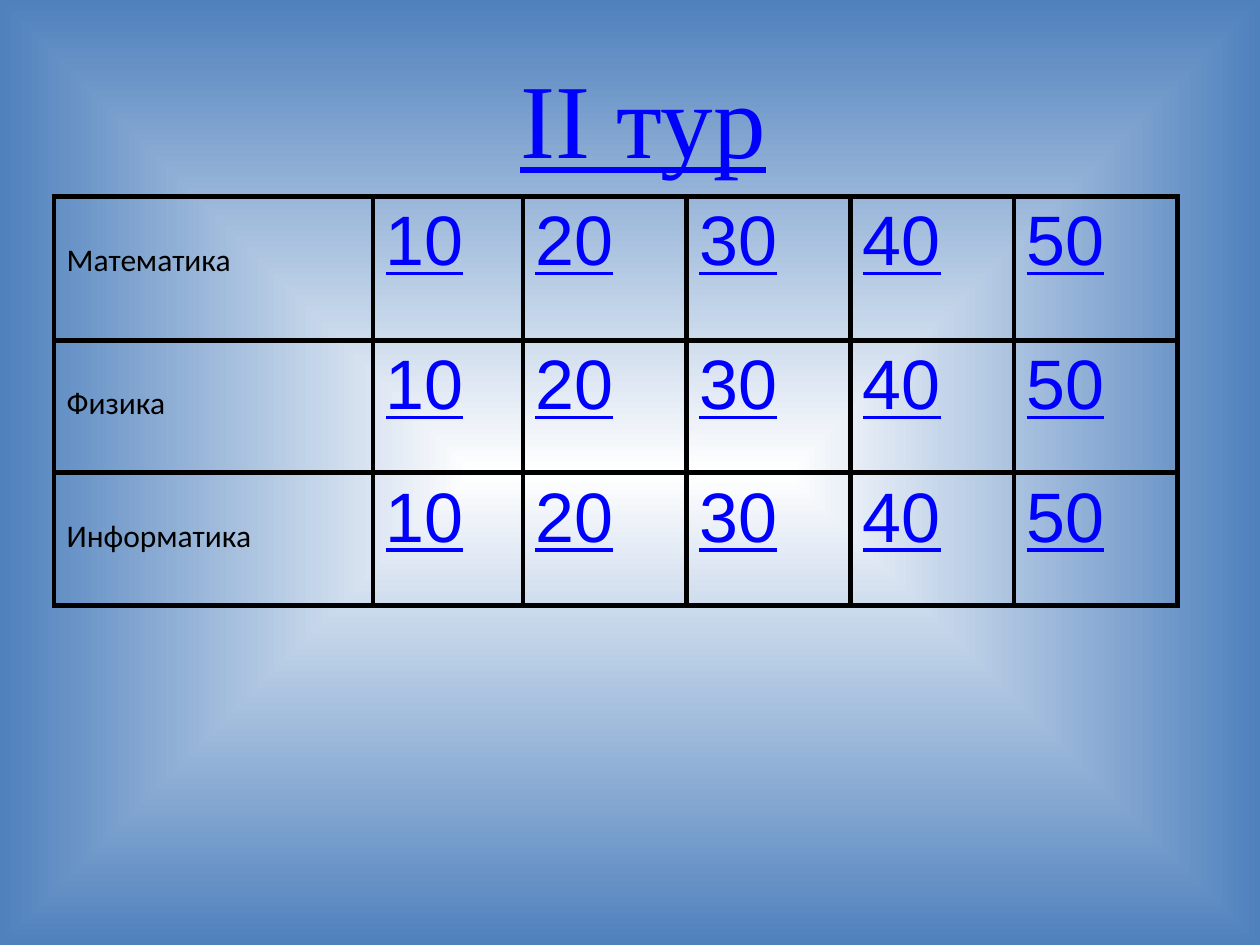
from lxml import etree
from pptx import Presentation
from pptx.dml.color import RGBColor as RGB
from pptx.enum.text import MSO_ANCHOR as ANCHOR, PP_ALIGN as ALIGN
from pptx.oxml import parse_xml
from pptx.oxml.ns import nsdecls, qn
from pptx.util import Cm, Pt

COLORS = {"center": "FFFFFF", "edge": "4F81BD", "link": "0000FF", "text": "000000", "border": "000000"}
SUBJECTS = ["Математика", "Физика", "Информатика"]
POINTS = [10, 20, 30, 40, 50]
COLUMNS = [6.43, 3.02] + [3.3] * 4
ROWS = [2.9, 2.67, 2.67]


def write(tf, text, size=40, font="Arial", color="link", underline=True, align=ALIGN.LEFT):
    p = tf.paragraphs[0]
    p.alignment = align
    r = p.add_run()
    r.text = text
    r.font.size = Pt(size)
    r.font.name = font
    r.font.underline = underline
    r.font.color.rgb = RGB.from_string(COLORS[color])


def add_borders(cell):
    tcPr = cell._tc.get_or_add_tcPr()
    for i, side in enumerate(["lnL", "lnR", "lnT", "lnB"]):
        tcPr.insert(i, parse_xml(
            f'<a:{side} {nsdecls("a")} w="{Pt(3)}"><a:solidFill>'
            f'<a:srgbClr val="{COLORS["border"]}"/></a:solidFill></a:{side}>'))


prs = Presentation()
prs.slide_width, prs.slide_height = Cm(25.4), Cm(19.05)
s = prs.slides.add_slide(prs.slide_layouts[6])

fill = s.background.fill
fill.gradient()
for stop, name in zip(fill.gradient_stops, ["center", "edge"]):
    stop.color.rgb = RGB.from_string(COLORS[name])
grad = next(s.element.iter(qn("a:gradFill")))
grad.remove(grad.find(qn("a:lin")))
path = etree.SubElement(grad, qn("a:path"), path="shape")
etree.SubElement(path, qn("a:fillToRect"), l="50000", t="50000", r="50000", b="50000")

title = s.shapes.add_textbox(Cm(1.27), Cm(0.76), Cm(22.86), Cm(3.18))
tf = title.text_frame
tf.word_wrap = True
tf.vertical_anchor = ANCHOR.MIDDLE
tf.margin_left = Cm(0.78)
write(tf, "II тур", size=60, font="Times New Roman", align=ALIGN.CENTER)

frame = s.shapes.add_table(len(ROWS), len(COLUMNS), Cm(1.09), Cm(3.96), Cm(sum(COLUMNS)), Cm(sum(ROWS)))
table = frame.table
table.first_row = False
table.horz_banding = False
for column, width in zip(table.columns, COLUMNS):
    column.width = Cm(width)
for row, height, subject in zip(table.rows, ROWS, SUBJECTS):
    row.height = Cm(height)
    for i, cell in enumerate(row.cells):
        cell.fill.background()
        add_borders(cell)
        if i == 0:
            cell.margin_top = Cm(0.9)
            write(cell.text_frame, subject, size=18, font="Calibri", color="text", underline=False)
        else:
            write(cell.text_frame, str(POINTS[i - 1]))

prs.save("out.pptx")
